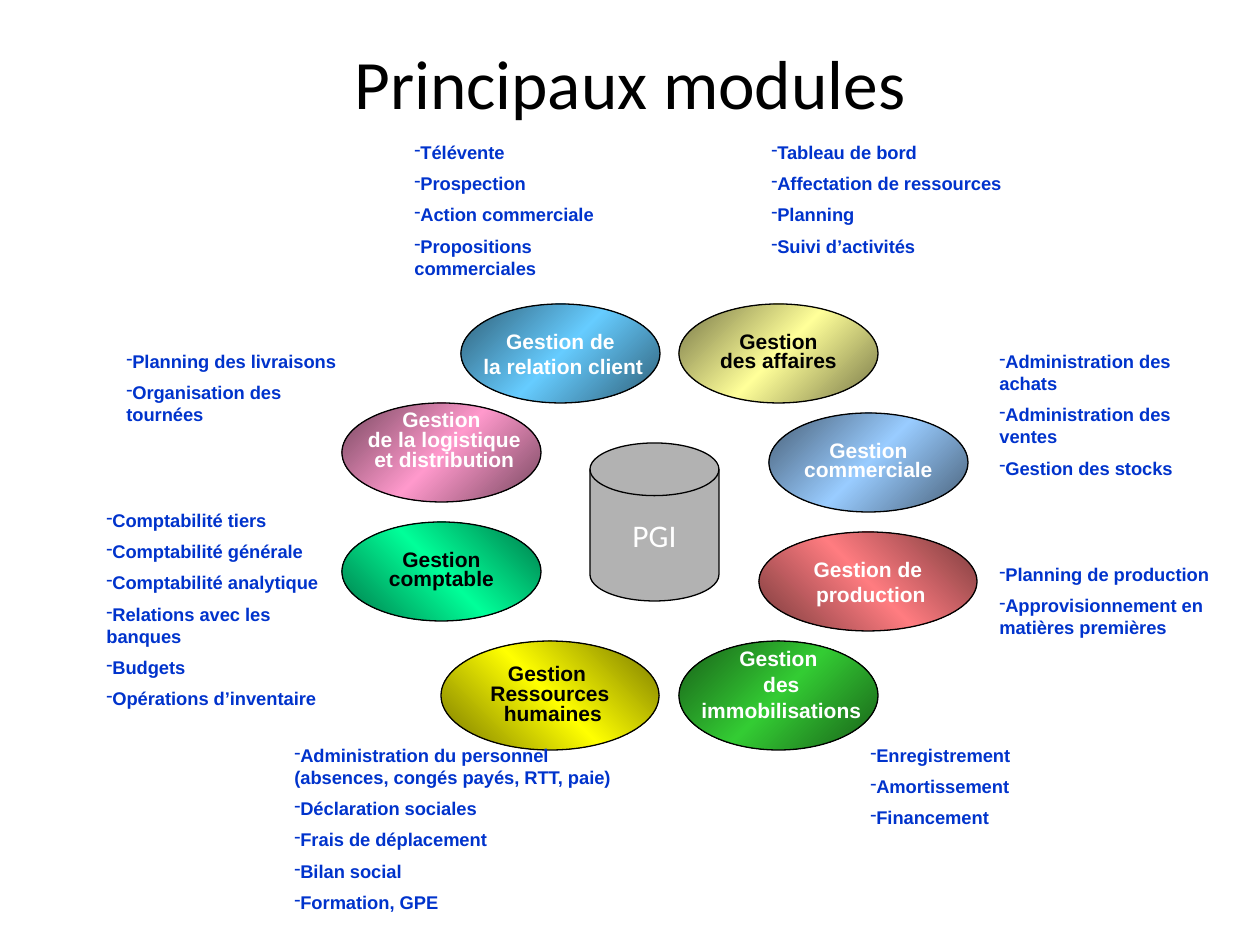
import copy

import pptx
import pptx.dml.color
import pptx.enum.shapes
import pptx.enum.text
import pptx.oxml.ns
import pptx.util

SHAPE = pptx.enum.shapes.MSO_SHAPE
ALIGN = pptx.enum.text.PP_ALIGN
MIDDLE = pptx.enum.text.MSO_ANCHOR.MIDDLE
FIT = pptx.enum.text.MSO_AUTO_SIZE.SHAPE_TO_FIT_TEXT
Pt = pptx.util.Pt
qn = pptx.oxml.ns.qn

HEX = {
    "black": "000000", "white": "FFFFFF", "blue": "0033CC", "grey": "B2B2B2",
    "pink": "FF99CC", "plum": "76475E", "yellow": "FFFF00", "olive": "767600",
    "coral": "FF7C80", "brick": "76393B", "sky": "99CCFF", "slate": "475E76",
    "cream": "FFFF99", "khaki": "767647", "mint": "00FF99", "pine": "007647",
    "azure": "66CCFF", "teal": "2F5E76", "green": "33CC33", "moss": "185E18",
}


class Deck:
    """Holds the style and the current slide."""

    scale = 914400 / 126  # EMU in one px
    fonts = {
        "title": {"name": "Calibri", "size": Pt(39.6), "bold": False},
        "core": {"name": "Calibri", "size": Pt(18), "bold": False},
        "label": {"name": "Arial", "size": Pt(12), "bold": True},
        "list": {"name": "Arial", "size": Pt(10.5), "bold": True},
    }

    def __init__(self):
        self.show = pptx.Presentation()
        self.show.slide_width = self.emu(1260)
        self.show.slide_height = self.emu(945)
        self.slide = self.show.slides.add_slide(self.show.slide_layouts[5])

    def emu(self, px):
        return pptx.util.Emu(round(px * self.scale))

    def rgb(self, name):
        return pptx.dml.color.RGBColor.from_string(HEX[name])

    def place(self, shape, box):
        for key, px in zip(("left", "top", "width", "height"), box):
            setattr(shape, key, self.emu(px))

    def label(self, shape, lines, font, ink, para):
        frame = shape.text_frame
        for i, line in enumerate(lines):
            par = frame.add_paragraph() if i else frame.paragraphs[0]
            for key, value in para.items():
                setattr(par, key, value)
            run = par.add_run()
            run.text = line
            for key, value in self.fonts[font].items():
                setattr(run.font, key, value)
            run.font.color.rgb = self.rgb(ink)
        return frame

    def title(self, text, box):
        shape = self.slide.shapes.title
        self.place(shape, box)
        frame = self.label(shape, [text], "title", "black", {"alignment": ALIGN.CENTER})
        frame.vertical_anchor = MIDDLE

    def solid(self, kind, box, lines, font, ink, para, lift=0):
        """Add an outlined shape; lift enlarges the bottom inset to raise its text."""
        shape = self.slide.shapes.add_shape(kind, *map(self.emu, box))
        shape.shadow.inherit = False
        shape.line.color.rgb = self.rgb("black")
        shape.line.width = Pt(0.75)
        frame = self.label(shape, lines, font, ink, {"alignment": ALIGN.CENTER, **para})
        frame.word_wrap = False
        frame.vertical_anchor = MIDDLE
        frame.margin_bottom = self.emu(6 + lift)
        return shape

    def core(self, text, box):
        shape = self.solid(SHAPE.FLOWCHART_MAGNETIC_DISK, box, [text], "core", "white", {})
        shape.fill.solid()
        shape.fill.fore_color.rgb = self.rgb("grey")

    def module(self, box, lines, ink, edge, glow, angle, para, lift=0):
        shape = self.solid(SHAPE.OVAL, box, lines, "label", ink, para, lift)
        fill = shape.fill
        fill.gradient()
        fill.gradient_angle = 360 - angle
        # A third stop makes the bright band in the middle
        stops = shape.element.spPr.find(".//" + qn("a:gsLst"))
        stops.append(copy.deepcopy(stops[0]))
        for stop, pos, name in zip(fill.gradient_stops, (0, 0.5, 1), (edge, glow, edge)):
            stop.position = pos
            stop.color.rgb = self.rgb(name)

    def bullets(self, box, lines):
        shape = self.slide.shapes.add_textbox(*map(self.emu, box))
        frame = self.label(shape, lines, "list", "blue", {"space_before": Pt(5.25)})
        frame.word_wrap = True
        frame.auto_size = FIT
        for par in frame.paragraphs:
            props = par._p.get_or_add_pPr()
            for tag, attrs in (("a:buFontTx", {}), ("a:buChar", {"char": "-"})):
                props.append(props.makeelement(qn(tag), attrs))


TIGHT = {"line_spacing": 0.75}
CLOSE = {"line_spacing": 0.8}
SPACED = {"line_spacing": 0.75, "space_before": Pt(4)}

# Box, lines, ink, edge, glow, angle, paragraph format, lift
MODULES = [
    ((342, 403, 199, 99), ["Gestion", " de la logistique", " et distribution"],
     "white", "plum", "pink", 45, CLOSE, 22),
    ((441, 641, 218, 109), ["Gestion ", "Ressources", " humaines"],
     "black", "olive", "yellow", 315, CLOSE),
    ((759, 532, 218, 99), ["Gestion de", " production"],
     "white", "brick", "coral", 315, {}),
    ((769, 413, 199, 99), ["Gestion", "commerciale"],
     "white", "slate", "sky", 45, TIGHT),
    ((679, 304, 199, 99), ["Gestion", "des affaires"],
     "black", "khaki", "cream", 45, TIGHT),
    ((342, 522, 199, 99), ["Gestion", "comptable"],
     "black", "pine", "mint", 315, TIGHT),
    ((461, 304, 199, 99), ["Gestion de", " la relation client"],
     "white", "teal", "azure", 45, {}),
    ((679, 641, 199, 109), ["Gestion", " des", " immobilisations"],
     "white", "moss", "green", 45, SPACED, 17),
]

LISTS = [
    ((987, 344, 248, 146),
     ["Administration des achats", "Administration des ventes", "Gestion des stocks"]),
    ((759, 135, 277, 135),
     ["Tableau de bord", "Affectation de ressources", "Planning", "Suivi d’activités"]),
    ((402, 135, 258, 158),
     ["Télévente", "Prospection", "Action commerciale", "Propositions commerciales"]),
    ((94, 503, 248, 224),
     ["Comptabilité tiers", "Comptabilité générale", "Comptabilité analytique",
      "Relations avec les banques", "Budgets", "Opérations d’inventaire"]),
    ((858, 738, 287, 102), ["Enregistrement", "Amortissement", "Financement"]),
    ((282, 738, 377, 190),
     ["Administration du personnel (absences, congés payés, RTT, paie)",
      "Déclaration sociales", "Frais de déplacement", "Bilan social", "Formation, GPE"]),
    ((987, 557, 238, 123),
     ["Planning de production", "Approvisionnement en matières premières"]),
    ((114, 344, 238, 91), ["Planning des livraisons", "Organisation des tournées"]),
]


def main():
    deck = Deck()
    deck.title("Principaux modules", (63, 38, 1134, 87))
    # Central database
    deck.core("PGI", (590, 443, 129, 158))
    # Ring of modules
    for module in MODULES:
        deck.module(*module)
    # Functions of each module
    for box, lines in LISTS:
        deck.bullets(box, lines)
    deck.show.save("out.pptx")


if __name__ == "__main__":
    main()
